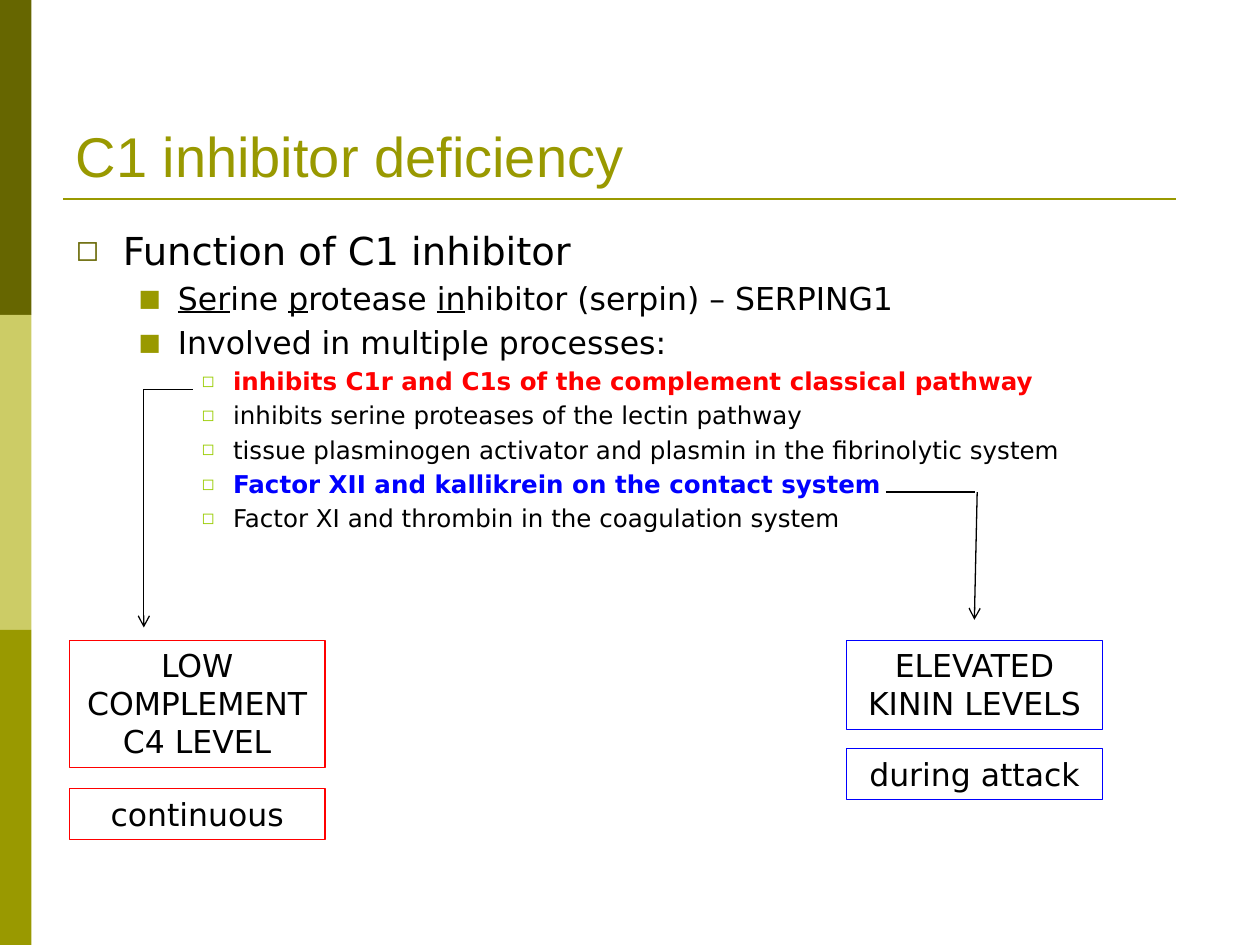
"""Build the slide on C1 inhibitor deficiency."""
from dataclasses import dataclass

from lxml import etree
from pptx import Presentation
from pptx import util as u
from pptx.dml import color
from pptx.enum import shapes, text
from pptx.oxml import ns


@dataclass(frozen=True)
class Theme:
    """Colours, fonts and type sizes."""
    dark: str = "666600"
    pale: str = "CCCC66"
    olive: str = "999900"
    lime: str = "99CC00"
    ink: str = "000000"
    red: str = "FF0000"
    blue: str = "0000FF"
    heading_font: str = "Arial"
    body_font: str = "DejaVu Sans"
    heading_size: float = 32
    level_sizes: tuple = (22, 18, 14)
    box_size: float = 18
    hairline: float = 0.75
    rule: float = 1.5


THEME = Theme()


@dataclass(frozen=True)
class Level:
    """Bullet and indent of one outline level."""
    margin: float
    indent: float
    mark: str
    mark_color: str
    mark_percent: int


@dataclass(frozen=True)
class Point:
    """One list entry; every second phrase is underlined."""
    level: int
    phrases: tuple
    accent: str = ""


@dataclass(frozen=True)
class Box:
    """One outlined consequence."""
    label: str
    left: float
    top: float
    height: float
    outline: str


@dataclass(frozen=True)
class Line:
    """One straight line, optionally ending in an arrowhead."""
    start: tuple
    end: tuple
    ink: str = THEME.ink
    width: float = THEME.hairline
    arrow: bool = False


LEVELS = (
    Level(27, -27, "◻", THEME.dark, 75),
    Level(58.5, -22.5, "■", THEME.olive, 75),
    Level(90, -18, "◻", THEME.lime, 65),
)
POINTS = (
    Point(0, ("Function of C1 inhibitor",)),
    Point(1, ("", "Ser", "ine ", "p", "rotease ", "in", "hibitor (serpin) – SERPING1")),
    Point(1, ("Involved in multiple processes:",)),
    Point(2, ("inhibits C1r and C1s of the complement classical pathway",), THEME.red),
    Point(2, ("inhibits serine proteases of the lectin pathway",)),
    Point(2, ("tissue plasminogen activator and plasmin in the fibrinolytic system",)),
    Point(2, ("Factor XII and kallikrein on the contact system",), THEME.blue),
    Point(2, ("Factor XI and thrombin in the coagulation system",)),
)
BOX_WIDTH = 146.2
BOXES = (
    Box("LOW COMPLEMENT C4 LEVEL", 39.6, 365.8, 72.7, THEME.red),
    Box("continuous", 39.6, 450.7, 29, THEME.red),
    Box("ELEVATED KININ LEVELS", 483.8, 365.8, 51, THEME.blue),
    Box("during attack", 483.8, 427.7, 29, THEME.blue),
)
LINES = (
    Line((36, 113.8), (672, 113.8), THEME.olive, THEME.rule),
    Line((82.2, 222.5), (110.2, 222.5)),
    Line((82.2, 222.5), (82.2, 358.6), arrow=True),
    Line((506.2, 281.2), (557, 281.2)),
    Line((558.4, 281.2), (556.8, 354.2), arrow=True),
)


def style(run, font: str, size: float, ink: str) -> None:
    """Set the font, size and colour of a run."""
    run.font.name = font
    run.font.size = u.Pt(size)
    run.font.color.rgb = color.RGBColor.from_string(ink)


def place(holder, left: float, top: float, width: float, height: float) -> None:
    """Move and size a placeholder."""
    holder.left, holder.top = u.Pt(left), u.Pt(top)
    holder.width, holder.height = u.Pt(width), u.Pt(height)
    holder.text_frame.auto_size = text.MSO_AUTO_SIZE.NONE


def set_bullet(paragraph, level: Level) -> None:
    """Give a paragraph its hanging indent and bullet."""
    props = paragraph._p.get_or_add_pPr()
    props.set("marL", str(u.Pt(level.margin)))
    props.set("indent", str(u.Pt(level.indent)))
    tint = etree.SubElement(props, ns.qn("a:buClr"))
    etree.SubElement(tint, ns.qn("a:srgbClr"), val=level.mark_color)
    etree.SubElement(props, ns.qn("a:buSzPct"), val=str(level.mark_percent * 1000))
    etree.SubElement(props, ns.qn("a:buFont"), typeface=THEME.body_font)
    etree.SubElement(props, ns.qn("a:buChar"), char=level.mark)


def fill_title(title) -> None:
    """Write the heading."""
    place(title, 36, 21.6, 648, 90)
    title.text_frame.text = "C1 inhibitor deficiency"
    title.text_frame.vertical_anchor = text.MSO_ANCHOR.BOTTOM
    heading = title.text_frame.paragraphs[0]
    heading.alignment = text.PP_ALIGN.LEFT
    style(heading.runs[0], THEME.heading_font, THEME.heading_size, THEME.olive)


def fill_outline(body) -> None:
    """Write the bulleted outline."""
    place(body, 36, 126, 648, 356.4)
    frame = body.text_frame
    for number, point in enumerate(POINTS):
        paragraph = frame.add_paragraph() if number else frame.paragraphs[0]
        paragraph.level = point.level
        set_bullet(paragraph, LEVELS[point.level])
        for index, phrase in enumerate(point.phrases):
            if phrase:
                run = paragraph.add_run()
                run.text = phrase
                style(run, THEME.body_font, THEME.level_sizes[point.level],
                      point.accent or THEME.ink)
                run.font.bold = bool(point.accent)
                run.font.underline = index % 2 == 1


def add_rectangle(slide, left: float, top: float, width: float, height: float):
    """Add a rectangle without shadow."""
    rectangle = slide.shapes.add_shape(
        shapes.MSO_SHAPE.RECTANGLE, u.Pt(left), u.Pt(top), u.Pt(width), u.Pt(height))
    rectangle.shadow.inherit = False
    return rectangle


def add_box(slide, box: Box) -> None:
    """Draw an outlined box with centred text."""
    consequence = add_rectangle(slide, box.left, box.top, BOX_WIDTH, box.height)
    consequence.fill.background()
    consequence.line.color.rgb = color.RGBColor.from_string(box.outline)
    consequence.line.width = u.Pt(THEME.hairline)
    frame = consequence.text_frame
    frame.text = box.label
    frame.word_wrap = True
    frame.auto_size = text.MSO_AUTO_SIZE.SHAPE_TO_FIT_TEXT
    frame.vertical_anchor = text.MSO_ANCHOR.TOP
    frame.paragraphs[0].alignment = text.PP_ALIGN.CENTER
    style(frame.paragraphs[0].runs[0], THEME.body_font, THEME.box_size, THEME.ink)


def add_line(slide, line: Line) -> None:
    """Draw a straight line."""
    connector = slide.shapes.add_connector(
        shapes.MSO_CONNECTOR.STRAIGHT, *(u.Pt(value) for value in line.start + line.end))
    connector.line.color.rgb = color.RGBColor.from_string(line.ink)
    connector.line.width = u.Pt(line.width)
    properties = connector._element.spPr
    if line.arrow:
        etree.SubElement(properties.find(ns.qn("a:ln")), ns.qn("a:tailEnd"), type="arrow")
    etree.SubElement(properties, ns.qn("a:effectLst"))


def main() -> None:
    """Build and save the slide."""
    deck = Presentation()
    deck.slide_width, deck.slide_height = u.Pt(720), u.Pt(540)
    slide = deck.slides.add_slide(deck.slide_layouts[1])
    fill_title(slide.shapes.title)
    fill_outline(slide.placeholders[1])
    for row, tint in enumerate((THEME.dark, THEME.pale, THEME.olive)):
        band = add_rectangle(slide, 0, row * 180, 18, 180)
        band.fill.solid()
        band.fill.fore_color.rgb = color.RGBColor.from_string(tint)
        band.line.fill.background()
    for line in LINES:
        add_line(slide, line)
    for box in BOXES:
        add_box(slide, box)
    deck.save("out.pptx")


if __name__ == "__main__":
    main()
